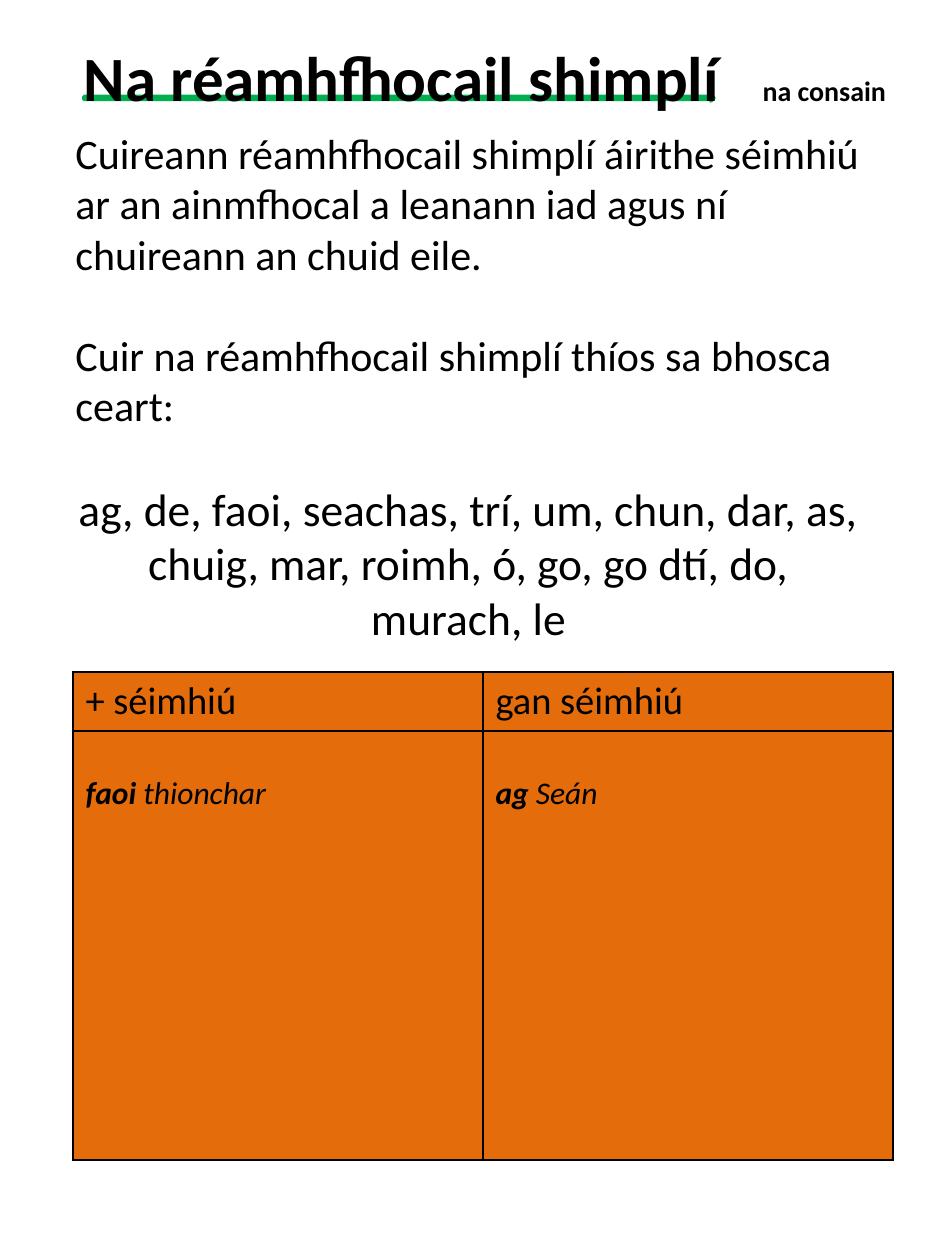
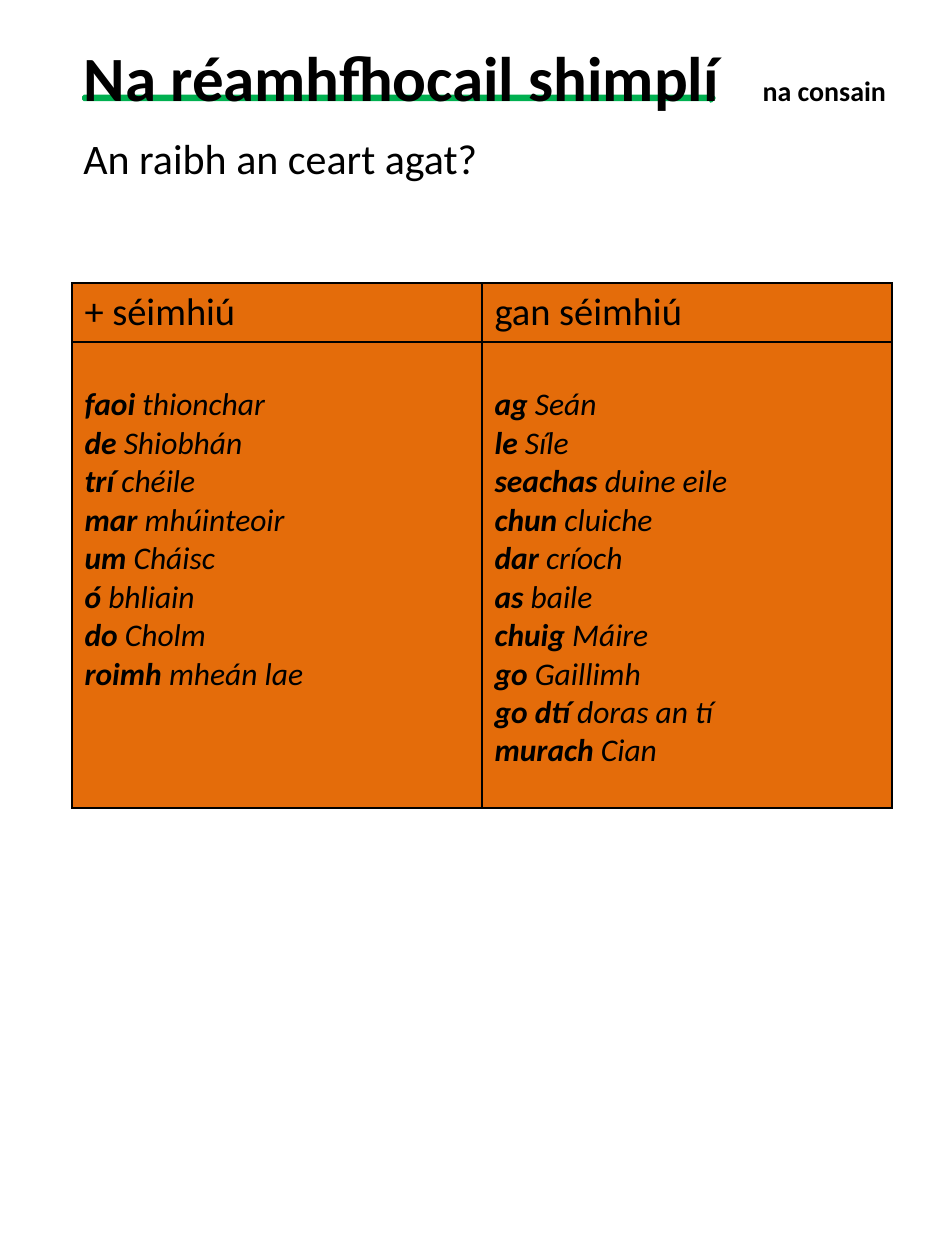
from lxml.etree import SubElement
from pptx import Presentation
from pptx.dml.color import RGBColor
from pptx.enum.shapes import MSO_SHAPE
from pptx.enum.text import MSO_ANCHOR, MSO_AUTO_SIZE, PP_ALIGN
from pptx.oxml import parse_xml
from pptx.oxml.ns import nsdecls, qn
from pptx.util import Emu, Pt

SCALE = 914400 / 126
FONT = "Calibri"
COLORS = {"ink": "000000", "underline": "00B050", "cell": "E46C0A"}

TITLE, TOPIC = "Na réamhfhocail shimplí", "na consain"
HEADINGS = ["+ séimhiú", "gan séimhiú"]

SLIDES = [
    {
        "text_at": (63, 121, 811, 534),
        "paragraphs": [
            ("Cuireann réamhfhocail shimplí áirithe séimhiú ar an ainmfhocal "
             "a leanann iad agus ní chuireann an chuid eile.", 24, PP_ALIGN.LEFT),
            ("Cuir na réamhfhocail shimplí thíos sa bhosca ceart:", 24, PP_ALIGN.LEFT),
            ("ag, de, faoi, seachas, trí, um, chun, dar, as, chuig, mar, roimh, "
             "ó, go, go dtí, do, murach, le", 26, PP_ALIGN.CENTER),
        ],
        "table_at": (73, 672),
        "answers_height": 429,
        "answers": [[("faoi", "thionchar")], [("ag", "Seán")]],
    },
    {
        "text_at": (71, 126, 832, 102),
        "paragraphs": [("An raibh an ceart agat?", 24, PP_ALIGN.LEFT)],
        "table_at": (72, 283),
        "answers_height": 466,
        "answers": [
            [("faoi", "thionchar"), ("de", "Shiobhán"), ("trí", "chéile"),
             ("mar", "mhúinteoir"), ("um", "Cháisc"), ("ó", "bhliain"),
             ("do", "Cholm"), ("roimh", "mheán lae")],
            [("ag", "Seán"), ("le", "Síle"), ("seachas", "duine eile"),
             ("chun", "cluiche"), ("dar", "críoch"), ("as", "baile"),
             ("chuig", "Máire"), ("go", "Gaillimh"), ("go dtí", "doras an tí"),
             ("murach", "Cian")],
        ],
    },
]

TITLE_AT = (71, 31, 832, 85)
UNDERLINE_AT = (84, 95, 630, 6)
TOPIC_TAB = 679
COLUMN_WIDTH, HEADING_HEIGHT = 410, 59
ANSWERS_TOP_MARGIN = 44


def px(length):
    return Emu(round(length * SCALE))


def color(name):
    return RGBColor.from_string(COLORS[name])


def set_font(font, size):
    font.name = FONT
    font.size = Pt(size)
    font.color.rgb = color("ink")


def add_span(para, text, size, bold):
    span = para.add_run()
    span.text = text
    set_font(span.font, size)
    span.font.bold = bold
    return span


def add_title(page):
    title = page.shapes.title
    title.left, title.top, title.width, title.height = map(px, TITLE_AT)
    frame = title.text_frame
    frame.auto_size = MSO_AUTO_SIZE.NONE
    frame.vertical_anchor = MSO_ANCHOR.MIDDLE
    frame.margin_top, frame.margin_bottom = px(6), 0
    para = frame.paragraphs[0]
    para.alignment = PP_ALIGN.LEFT
    add_span(para, TITLE, 36, True)
    add_span(para, "\t" + TOPIC, 16, True)
    tabs = SubElement(para._p.get_or_add_pPr(), qn("a:tabLst"))
    SubElement(tabs, qn("a:tab"), pos=str(px(TOPIC_TAB)), algn="l")

    underline = page.shapes.add_shape(MSO_SHAPE.RIGHT_ARROW, *map(px, UNDERLINE_AT))
    underline.shadow.inherit = False
    underline.fill.solid()
    underline.fill.fore_color.rgb = color("underline")
    underline.line.color.rgb = color("underline")
    underline.line.width = Pt(2)
    title.element.addprevious(underline.element)


def add_text(page, place, paragraphs):
    box = page.shapes.add_textbox(*map(px, place))
    frame = box.text_frame
    frame.word_wrap = True
    for index, (text, size, alignment) in enumerate(paragraphs):
        para = frame.add_paragraph() if index else frame.paragraphs[0]
        para.text = text
        para.alignment = alignment
        para.space_before = Pt(29 if index else 0)
        set_font(para.font, size)


def style_cell(cell):
    cell.fill.solid()
    cell.fill.fore_color.rgb = color("cell")
    properties = cell._tc.get_or_add_tcPr()
    for index, side in enumerate("LRTB"):
        properties.insert(index, parse_xml(
            f'<a:ln{side} {nsdecls("a")} w="12700"><a:solidFill>'
            f'<a:srgbClr val="{COLORS["ink"]}"/></a:solidFill></a:ln{side}>'))


def add_answer_table(page, place, answers_height, answers):
    heights = [HEADING_HEIGHT, answers_height]
    size = (COLUMN_WIDTH * len(HEADINGS), sum(heights))
    table = page.shapes.add_table(2, len(HEADINGS), *map(px, place + size)).table
    table.first_row = table.horz_banding = False
    for row, height in zip(table.rows, heights):
        row.height = px(height)
    for column, (heading, pairs) in enumerate(zip(HEADINGS, answers)):
        table.columns[column].width = px(COLUMN_WIDTH)
        top, bottom = table.cell(0, column), table.cell(1, column)
        style_cell(top)
        style_cell(bottom)
        para = top.text_frame.paragraphs[0]
        para.text = heading
        set_font(para.font, 22)
        bottom.margin_top = px(ANSWERS_TOP_MARGIN)
        frame = bottom.text_frame
        for index, (preposition, noun) in enumerate(pairs):
            para = frame.add_paragraph() if index else frame.paragraphs[0]
            for text, bold in ((preposition, True), (" " + noun, False)):
                add_span(para, text, 18, bold).font.italic = True


def main():
    deck = Presentation()
    deck.slide_width, deck.slide_height = px(945), px(1260)
    for content in SLIDES:
        page = deck.slides.add_slide(deck.slide_layouts[5])
        add_title(page)
        add_text(page, content["text_at"], content["paragraphs"])
        add_answer_table(page, content["table_at"], content["answers_height"],
                         content["answers"])
    deck.save("out.pptx")


if __name__ == "__main__":
    main()
